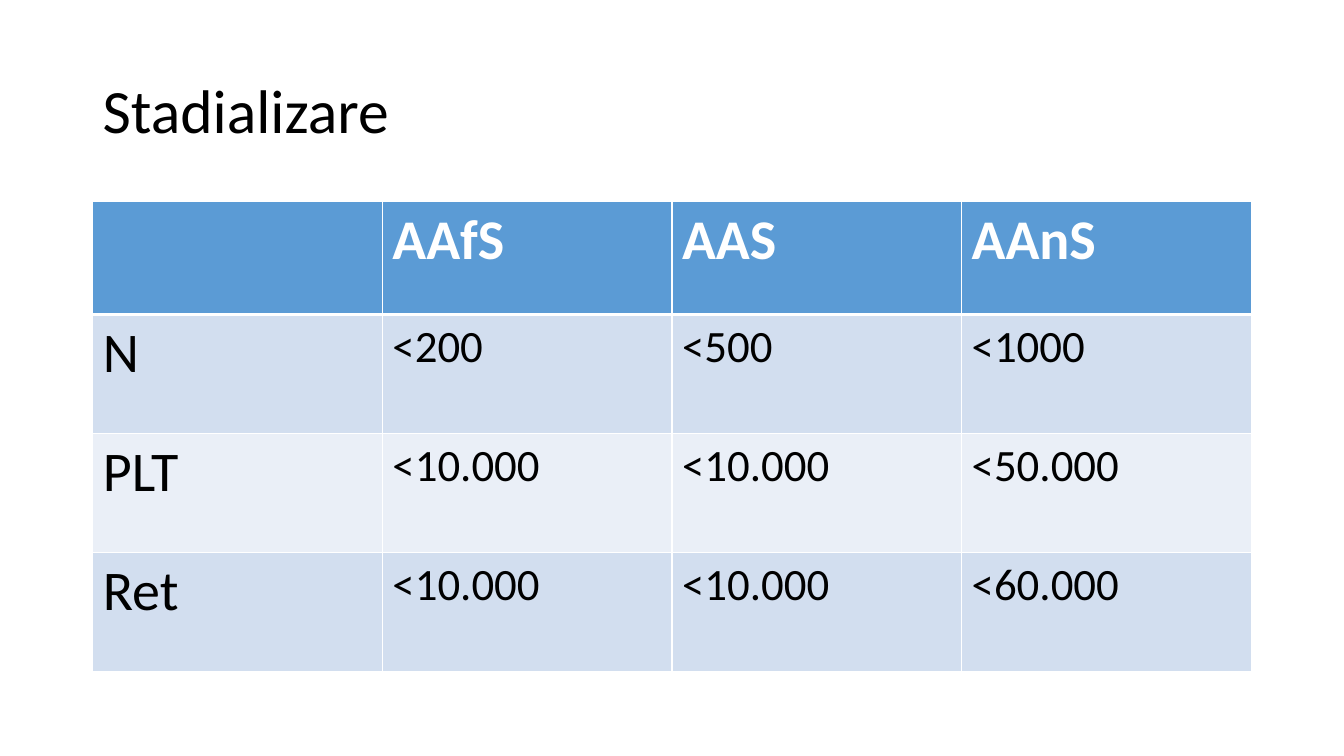
from dataclasses import dataclass

from lxml.etree import SubElement
from pptx import Presentation
from pptx.dml.color import RGBColor
from pptx.enum.text import MSO_ANCHOR
from pptx.oxml.ns import qn
from pptx.util import Inches, Pt


@dataclass(frozen=True)
class Theme:
    font: str = "Calibri"
    ink: str = "000000"
    paper: str = "FFFFFF"
    header: str = "5B9BD5"
    bands: tuple = ("D2DEEF", "EAEFF7")
    title_size: int = 44
    label_size: int = 40
    value_size: int = 32
    rule: int = 1
    header_rule: int = 3


THEME = Theme()
SLIDE_WIDTH, SLIDE_HEIGHT = 13.33, 7.5
MARGIN = 0.92
CONTENT_WIDTH = SLIDE_WIDTH - 2 * MARGIN
TITLE_TOP, TITLE_HEIGHT = 0.4, 1.45
TABLE_TOP, HEADER_HEIGHT, STAGE_HEIGHT = 2, 1.12, 1.18

STAGING = [
    ["", "AAfS", "AAS", "AAnS"],
    ["N", "<200", "<500", "<1000"],
    ["PLT", "<10.000", "<10.000", "<50.000"],
    ["Ret", "<10.000", "<10.000", "<60.000"],
]


def write(frame, text, *, size, color=THEME.ink, bold=False, spacing=None):
    frame.word_wrap = True
    paragraph = frame.paragraphs[0]
    paragraph.line_spacing = spacing
    paragraph.font.size = Pt(size)
    if not text:
        return
    run = paragraph.add_run()
    run.text = text
    run.font.name = THEME.font
    run.font.size = Pt(size)
    run.font.bold = bold
    run.font.color.rgb = RGBColor.from_string(color)


def add_title(slide, text):
    title = slide.shapes.add_textbox(
        Inches(MARGIN), Inches(TITLE_TOP), Inches(CONTENT_WIDTH), Inches(TITLE_HEIGHT)
    )
    title.text_frame.vertical_anchor = MSO_ANCHOR.MIDDLE
    write(title.text_frame, text, size=THEME.title_size, spacing=0.9)


def border_cell(cell, widths):
    properties = cell._tc.get_or_add_tcPr()
    for side, width in widths.items():
        line = SubElement(properties, qn(f"a:ln{side}"), w=str(Pt(width)))
        fill = SubElement(line, qn("a:solidFill"))
        SubElement(fill, qn("a:srgbClr"), val=THEME.paper)


def style_cell(cell, text, row, column):
    is_header = row == 0
    widths = dict.fromkeys("LRTB", THEME.rule)
    if is_header:
        widths["B"] = THEME.header_rule
    elif row == 1:
        widths["T"] = THEME.header_rule
    border_cell(cell, widths)
    cell.fill.solid()
    color = THEME.header if is_header else THEME.bands[(row - 1) % 2]
    cell.fill.fore_color.rgb = RGBColor.from_string(color)
    write(
        cell.text_frame,
        text,
        size=THEME.label_size if is_header or column == 0 else THEME.value_size,
        color=THEME.paper if is_header else THEME.ink,
        bold=is_header,
    )


def add_staging_table(slide, records):
    heights = [HEADER_HEIGHT] + [STAGE_HEIGHT] * (len(records) - 1)
    staging = slide.shapes.add_table(
        len(records), len(records[0]),
        Inches(MARGIN), Inches(TABLE_TOP), Inches(CONTENT_WIDTH), Inches(sum(heights)),
    ).table
    for row, record in enumerate(records):
        staging.rows[row].height = Inches(heights[row])
        for column, text in enumerate(record):
            style_cell(staging.cell(row, column), text, row, column)


def main():
    deck = Presentation()
    deck.slide_width = Inches(SLIDE_WIDTH)
    deck.slide_height = Inches(SLIDE_HEIGHT)
    slide = deck.slides.add_slide(deck.slide_layouts[6])
    add_title(slide, "Stadializare")
    add_staging_table(slide, STAGING)
    deck.save("out.pptx")


if __name__ == "__main__":
    main()
